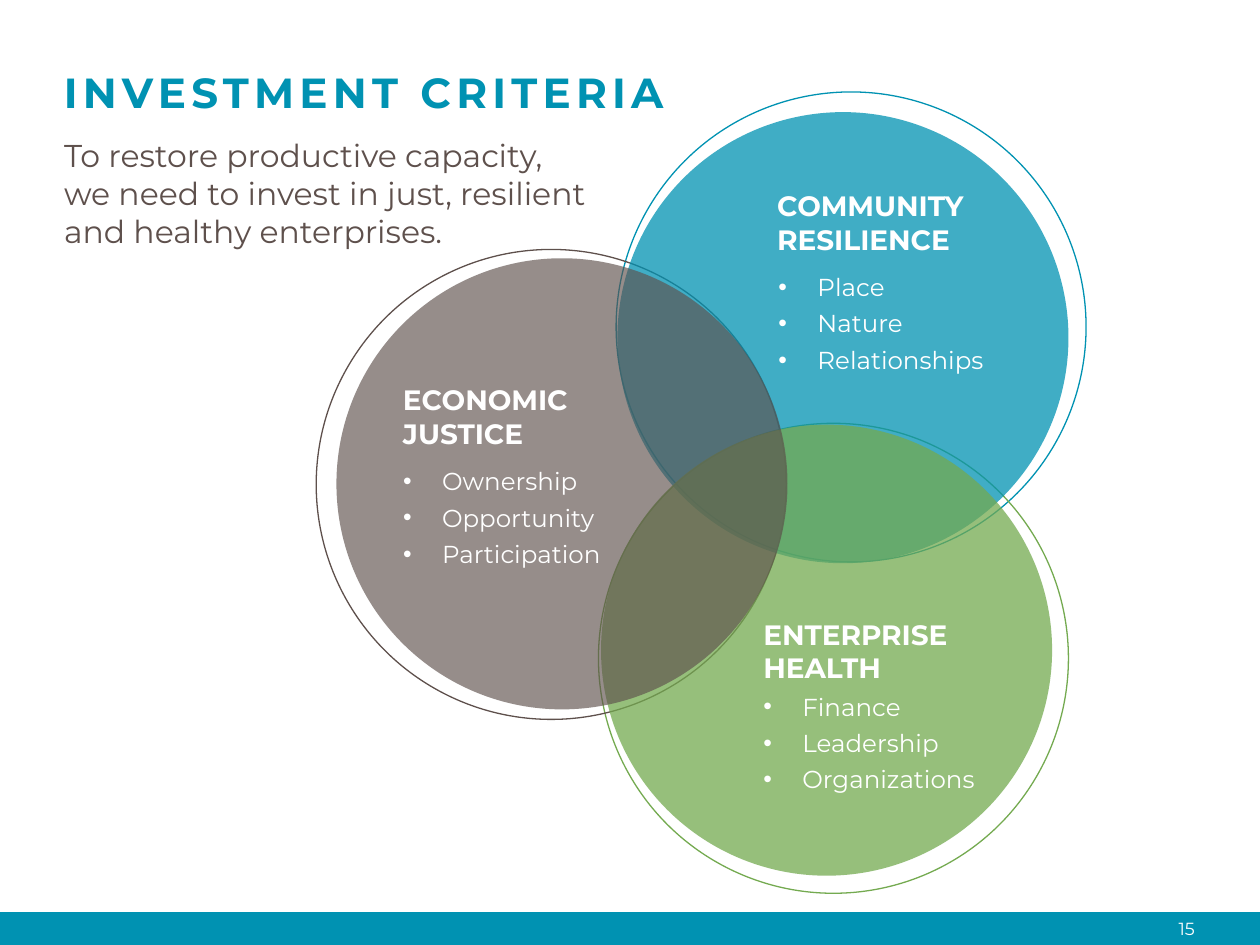
import pptx
import pptx.util
import pptx.dml.color
import pptx.enum.shapes
import pptx.enum.text
import pptx.oxml.ns
import lxml.etree

COLUMNS, ROWS = 100, 75
FONT = "Montserrat"
COLORS = {"blue": "0092B2", "green": "74AA50", "brown": "5E504C", "white": "FFFFFF"}
RING_SIZE, DISC_SIZE = 37.3, 35.8
HEADING_HEIGHT, LIST_HEIGHT = 6.4, 9.2

CRITERIA = [
    {"color": "blue", "opacity": 75, "ring": (48.9, 7.3), "disc": (49, 8.9),
     "heading": "COMMUNITY RESILIENCE", "heading_box": (60.7, 14.5, 20.2, HEADING_HEIGHT),
     "items": ["Place", "Nature", "Relationships"], "list_box": (60.8, 21.1, 19, LIST_HEIGHT)},
    {"color": "green", "opacity": 75, "ring": (47.5, 33.6), "disc": (47.7, 33.7),
     "heading": "ENTERPRISE HEALTH", "heading_box": (59.6, 48.5, 19.8, HEADING_HEIGHT),
     "items": ["Finance", "Leadership", "Organizations"], "list_box": (59.6, 54.4, 22.8, LIST_HEIGHT)},
    {"color": "brown", "opacity": 65, "ring": (25.1, 19.8), "disc": (26.7, 20.5),
     "heading": "ECONOMIC\nJUSTICE", "heading_box": (31, 29.9, 17.3, HEADING_HEIGHT),
     "items": ["Ownership", "Opportunity", "Participation"], "list_box": (31, 36.5, 22.8, LIST_HEIGHT)},
]

presentation = pptx.Presentation()
presentation.slide_width = pptx.util.Inches(10)
presentation.slide_height = pptx.util.Inches(7.5)


def place(box):
    column = presentation.slide_width / COLUMNS
    row = presentation.slide_height / ROWS
    left, top, width, height = box
    return [round(length) for length in (left * column, top * row, width * column, height * row)]


def color(name):
    return pptx.dml.color.RGBColor.from_string(COLORS[name])


def add_filled_shape(slide, kind, box, fill, opacity=100):
    shape = slide.shapes.add_shape(kind, *place(box))
    shape.shadow.inherit = False
    shape.line.fill.background()
    shape.fill.solid()
    shape.fill.fore_color.rgb = color(fill)
    if opacity < 100:
        color_element = shape.fill._xPr.find(".//" + pptx.oxml.ns.qn("a:srgbClr"))
        alpha = lxml.etree.SubElement(color_element, pptx.oxml.ns.qn("a:alpha"))
        alpha.set("val", str(opacity * 1000))


def add_ring(slide, box, line):
    shape = slide.shapes.add_shape(pptx.enum.shapes.MSO_SHAPE.OVAL, *place(box))
    shape.shadow.inherit = False
    shape.fill.background()
    shape.line.color.rgb = color(line)
    shape.line.width = pptx.util.Pt(0.75)


def add_text(slide, box, text, size, text_color, bold=False):
    text_frame = slide.shapes.add_textbox(*place(box)).text_frame
    text_frame.word_wrap = True
    text_frame.text = text
    for paragraph in text_frame.paragraphs:
        for run in paragraph.runs:
            run.font.name = FONT
            run.font.size = pptx.util.Pt(size)
            run.font.bold = bold
            run.font.color.rgb = color(text_color)
    return text_frame


def add_bullet_list(slide, box, items):
    text_frame = add_text(slide, box, "\n".join(items), 14, "white")
    indent = pptx.util.Inches(0.31)
    for index, paragraph in enumerate(text_frame.paragraphs):
        if index:
            paragraph.space_before = pptx.util.Pt(4)
        properties = paragraph._p.get_or_add_pPr()
        properties.set("marL", str(indent))
        properties.set("indent", str(-indent))
        font = lxml.etree.SubElement(properties, pptx.oxml.ns.qn("a:buFont"))
        font.set("typeface", "Arial")
        bullet = lxml.etree.SubElement(properties, pptx.oxml.ns.qn("a:buChar"))
        bullet.set("char", "•")


def add_venn_diagram(slide):
    for criterion in CRITERIA:
        add_ring(slide, (*criterion["ring"], RING_SIZE, RING_SIZE), criterion["color"])
    for criterion in CRITERIA:
        add_filled_shape(slide, pptx.enum.shapes.MSO_SHAPE.OVAL,
                         (*criterion["disc"], DISC_SIZE, DISC_SIZE),
                         criterion["color"], criterion["opacity"])
    for criterion in CRITERIA:
        add_text(slide, criterion["heading_box"], criterion["heading"], 16, "white", bold=True)
        add_bullet_list(slide, criterion["list_box"], criterion["items"])


def add_header(slide, title_box, introduction_box):
    title = add_text(slide, title_box, "INVESTMENT CRITERIA", 24, "blue", bold=True)
    title.vertical_anchor = pptx.enum.text.MSO_ANCHOR.MIDDLE
    title.paragraphs[0].runs[0].font._element.set("spc", "300")
    add_text(slide, introduction_box,
             "To restore productive capacity,\vwe need to invest in just, resilient\v"
             "and healthy enterprises.", 18, "brown")


def add_footer(slide, box):
    left, top, width, height = box
    add_filled_shape(slide, pptx.enum.shapes.MSO_SHAPE.RECTANGLE, box, "blue")
    number = add_text(slide, (left + width - 22.4, top, 18.2, height), "15", 10, "white")
    number.paragraphs[0].alignment = pptx.enum.text.PP_ALIGN.RIGHT


def main():
    slide = presentation.slides.add_slide(presentation.slide_layouts[6])
    add_venn_diagram(slide)
    add_header(slide, (4.1, 4.8, 92.4, 5), (4.1, 10.3, 49.5, 10.5))
    add_footer(slide, (0, 72.4, COLUMNS, 2.6))
    presentation.save("out.pptx")


if __name__ == "__main__":
    main()
